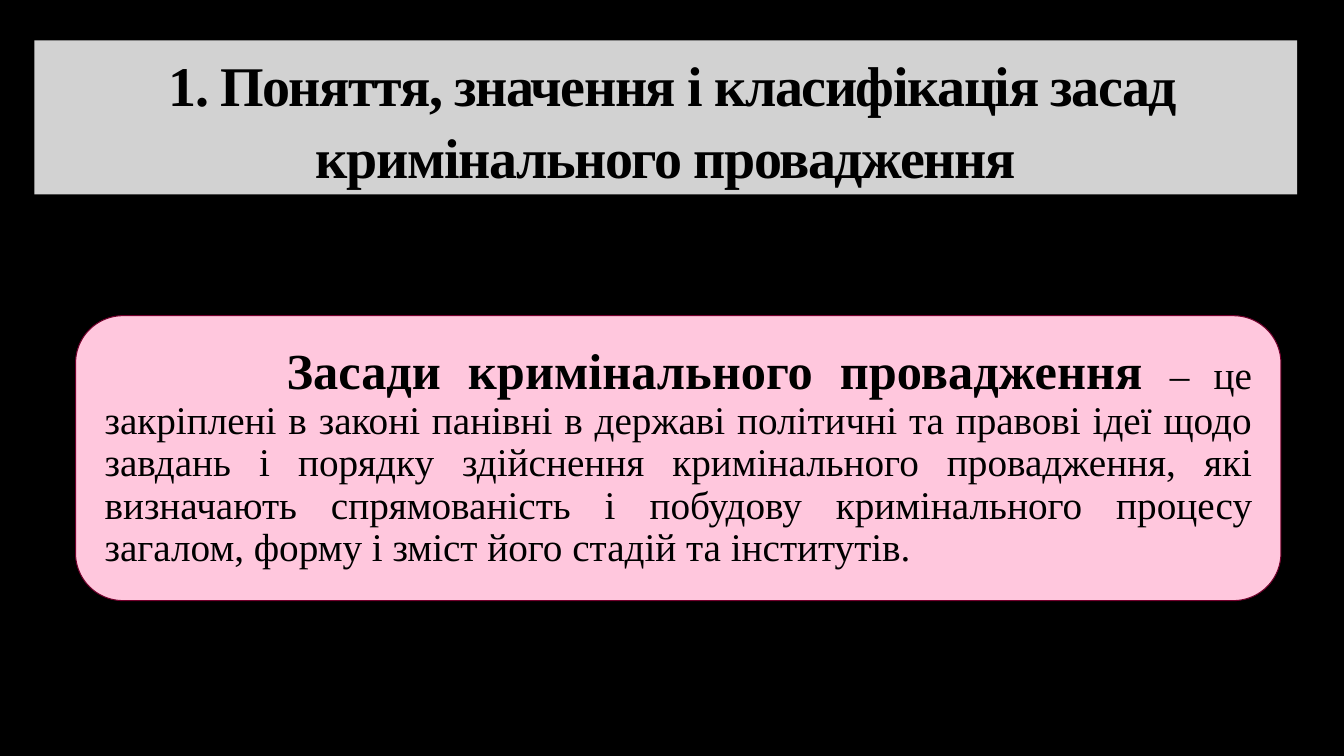
from pptx import Presentation
from pptx.dml.color import RGBColor
from pptx.enum.shapes import MSO_SHAPE
from pptx.enum.text import MSO_ANCHOR, MSO_AUTO_SIZE, PP_ALIGN
from pptx.util import Pt

BLACK = RGBColor(0x00, 0x00, 0x00)
GREY = RGBColor(0xD2, 0xD2, 0xD2)
PINK = RGBColor(0xFF, 0xC7, 0xDD)
WINE = RGBColor(0x72, 0x00, 0x2C)
FONT = "Times New Roman"

HEADING = " 1. Поняття, значення і класифікація засад кримінального провадження"
TERM = "Засади кримінального провадження "
DEFINITION = (
    "– це закріплені в законі панівні в державі політичні та правові ідеї "
    "щодо завдань і порядку здійснення кримінального провадження, які "
    "визначають спрямованість і побудову кримінального процесу загалом, "
    "форму і зміст його стадій та інститутів."
)


def set_format(target, values):
    for attribute, value in values.items():
        setattr(target, attribute, value)


def fill_solid(item, color):
    item.fill.solid()
    item.fill.fore_color.rgb = color


def add_run(paragraph, text, size, bold):
    run = paragraph.add_run()
    run.text = text
    set_format(run.font, {"name": FONT, "size": Pt(size), "bold": bold})
    run.font.color.rgb = BLACK
    return run


def format_heading(heading):
    set_format(heading, {"left": Pt(24.5), "top": Pt(28.8),
                         "width": Pt(902), "height": Pt(110)})
    fill_solid(heading, GREY)
    set_format(heading.text_frame, {
        "word_wrap": True,
        "auto_size": MSO_AUTO_SIZE.NONE,
        "vertical_anchor": MSO_ANCHOR.BOTTOM,
    })
    paragraph = heading.text_frame.paragraphs[0]
    set_format(paragraph, {"alignment": PP_ALIGN.CENTER, "line_spacing": 1.06})
    run = add_run(paragraph, HEADING, 40, True)
    # Letter spacing in hundredths of a point
    run.font._element.set("spc", "-100")


def add_definition_card(slide):
    card = slide.shapes.add_shape(MSO_SHAPE.ROUNDED_RECTANGLE,
                                  Pt(54), Pt(225.5), Pt(861), Pt(203.5))
    card.shadow.inherit = False
    fill_solid(card, PINK)
    card.line.color.rgb = WINE
    card.line.width = Pt(0.75)

    inset = Pt(10.8)
    set_format(card.text_frame, {
        "word_wrap": True,
        "vertical_anchor": MSO_ANCHOR.MIDDLE,
        "margin_left": inset,
        "margin_right": inset,
        "margin_top": inset,
        "margin_bottom": inset,
    })
    paragraph = card.text_frame.paragraphs[0]
    set_format(paragraph, {"alignment": PP_ALIGN.JUSTIFY, "line_spacing": 0.9})
    # First-line indent
    paragraph._p.get_or_add_pPr().set("indent", str(Pt(130)))
    add_run(paragraph, TERM, 36, True)
    add_run(paragraph, DEFINITION, 28, False)


def main():
    deck = Presentation()
    set_format(deck, {"slide_width": Pt(960), "slide_height": Pt(540)})
    slide = deck.slides.add_slide(deck.slide_layouts[5])
    fill_solid(slide.background, BLACK)

    add_definition_card(slide)
    format_heading(slide.shapes.title)
    deck.save("out.pptx")


if __name__ == "__main__":
    main()
